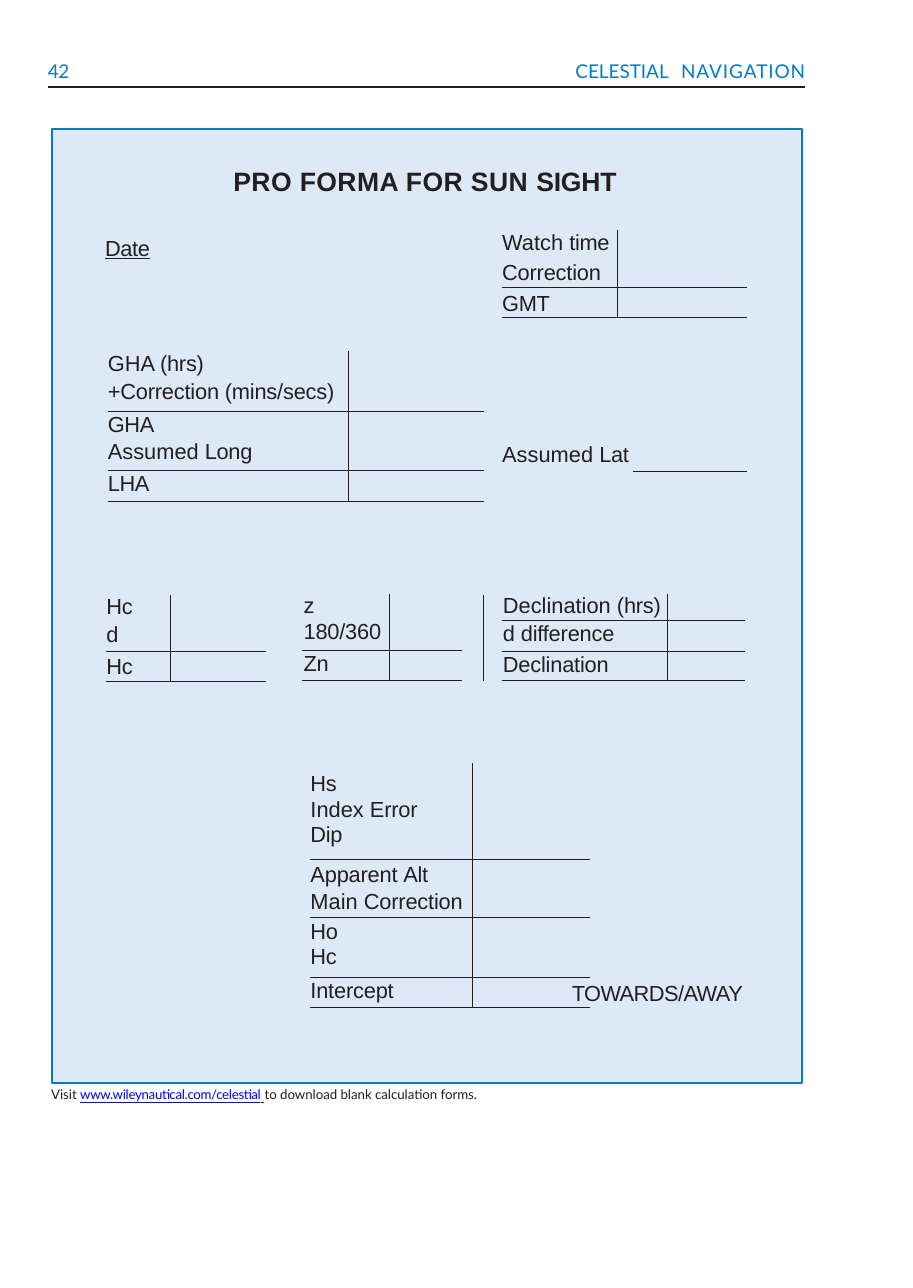
from dataclasses import dataclass
from typing import Optional, Union

from lxml.etree import SubElement
from pptx import Presentation
from pptx.dml.color import RGBColor
from pptx.enum.shapes import MSO_CONNECTOR as Connector, MSO_SHAPE as Preset
from pptx.enum.text import MSO_ANCHOR as Anchor, MSO_AUTO_SIZE as AutoSize, PP_ALIGN as Align
from pptx.oxml.ns import qn
from pptx.util import Inches, Length, Pt


@dataclass(frozen=True)
class Theme:
    ink: str = "231F20"
    accent: str = "007DC5"
    panel: str = "DEE9F7"
    link: str = "0000FF"
    body_font: str = "Arial"
    page_font: str = "Lato"
    title_size: float = 14
    form_size: float = 11.5
    header_size: float = 10
    note_size: float = 7
    thin: float = 0.5
    thick: float = 1


THEME = Theme()
CELL = 0.1


@dataclass(frozen=True)
class Style:
    size: float = THEME.form_size
    font: str = THEME.body_font
    color: str = THEME.ink
    bold: bool = False


@dataclass(frozen=True)
class Run:
    text: str
    tracking: float = 0
    color: Optional[str] = None
    underline: bool = False


@dataclass(frozen=True)
class Line:
    runs: tuple[Run, ...]
    before: float = 0
    spacing: Union[float, Length, None] = None
    align: Align = Align.LEFT


@dataclass(frozen=True)
class Label:
    column: float
    row: float
    width: float
    height: float
    lines: tuple[Line, ...]
    style: Style = Style()


@dataclass(frozen=True)
class FormRow:
    height: float
    lines: tuple[Line, ...]
    inset: float = 0


@dataclass(frozen=True)
class Form:
    column: float
    row: float
    widths: tuple[float, float]
    rows: tuple[FormRow, ...]
    indent: float = 0


@dataclass(frozen=True)
class Rule:
    start: tuple[float, float]
    end: tuple[float, float]
    weight: float = THEME.thin


def grid(cells: float) -> Length:
    return Inches(cells * CELL)


def line(text: str, tracking: float = 0, before: float = 0,
         spacing: Union[float, Length, None] = None) -> Line:
    return Line((Run(text, tracking),), before, spacing)


HEADER = Style(THEME.header_size, THEME.page_font, THEME.accent)
NOTE = Style(THEME.note_size, THEME.page_font)
TITLE = Label(17.1, 12, 30, 2.8, (Line((Run("PRO FORMA FOR SUN ", 0.2), Run("SIGHT", -0.1))),),
              Style(THEME.title_size, bold=True))

LABELS = (
    Label(3.5, 4.3, 1.8, 1.9, (line("42", -0.2),), HEADER),
    Label(41, 4.3, 18, 1.9, (Line((Run("CELESTIAL"), Run(" ", 4), Run("NAVIGATION", 0.5)),
                                  align=Align.RIGHT),), HEADER),
    Label(7.7, 17.1, 8, 2.2, (Line((Run("Date", -0.2, underline=True),)),)),
    Label(36.8, 32.2, 9.8, 2.2, (Line((Run("Assumed "), Run("Lat", -0.2))),)),
    Label(7.8, 43.3, 3, 6.6, (line("Hc", -0.2, spacing=1.04), line("d", -0.5, spacing=1.04),
                              line("Hc", -0.2, before=3.2))),
    Label(41.9, 71.7, 13.6, 2.2, (line("TOWARDS/AWAY", -0.3),)),
    Label(3.75, 79.5, 32, 1.4, (Line((
        Run("Visit "),
        Run("www.wileynautical.com/celestial", -0.15, THEME.link, True),
        Run(" ", 0.3, THEME.link, True),
        Run("to download blank calculation forms."))),), NOTE),
)

RULES = (
    Rule((3.5, 6.4), (59, 6.4), THEME.thick),
    Rule((46.4, 34.55), (54.75, 34.55)),
    Rule((7.8, 47.75), (19.5, 47.75)),
    Rule((7.8, 49.95), (19.5, 49.95)),
    Rule((12.5, 43.6), (12.5, 49.95)),
    Rule((35.45, 43.6), (35.45, 49.95)),
)

FORMS = (
    Form(36.8, 16.85, (8.45, 9.5), (
        FormRow(4.2, (Line((Run("Watch "), Run("time", -0.2)), spacing=Pt(13.3)),
                      line("Correction", -0.1, 2.5, Pt(13.3)))),
        FormRow(2.2, (line("GMT", -0.2, spacing=Pt(13.1)),), 0.3))),
    Form(7.9, 25.7, (17.6, 9.95), (
        FormRow(4.45, (Line((Run("GHA "), Run("(hrs)", -0.1))),
                       line("+Correction (mins/secs)", -0.1, 1.6)), 0.1),
        FormRow(4.3, (line("GHA", -0.2, spacing=Pt(13.4)),
                      Line((Run("Assumed "), Run("Long", -0.2)), 1.6))),
        FormRow(2.3, (line("LHA", -0.2, spacing=Pt(13.6)),)))),
    Form(22.75, 55.9, (11.9, 8.6), (
        FormRow(7.1, (line("Hs", -0.2),
                      Line((Run("Index "), Run("Error", -0.1)), spacing=1.04),
                      line("Dip", -0.2, spacing=1.04)), 0.7),
        FormRow(4.25, (Line((Run("Apparent ", -0.1), Run("Alt", -0.2)), spacing=Pt(14.4)),
                       Line((Run("Main "), Run("Correction", -0.1)), spacing=Pt(14.4)))),
        FormRow(4.4, (line("Ho", -0.2, spacing=1.04), line("Hc", -0.2, spacing=1.04)), 0.1),
        FormRow(2.2, (line("Intercept", -0.1),), 0.1))),
    Form(22.15, 43.55, (6.4, 5.3), (
        FormRow(4.15, (line("z", spacing=Pt(12.8)), line("180/360", -0.1, 0.6))),
        FormRow(2.15, (line("Zn", -0.2),), 0.1)), 0.1),
    Form(36.75, 43.55, (12.15, 5.7), (
        FormRow(1.9, (Line((Run("Declination "), Run("(hrs)", -0.1)), spacing=Pt(12.6)),)),
        FormRow(2.25, (Line((Run("d"), Run(" difference", -0.1)), spacing=Pt(13.5)),)),
        FormRow(2.15, (line("Declination", -0.1),), 0.1)), 0.1),
)


def write(frame, lines: tuple[Line, ...], style: Style) -> None:
    for index, item in enumerate(lines):
        paragraph = frame.paragraphs[0] if index == 0 else frame.add_paragraph()
        paragraph.alignment = item.align
        paragraph.space_before = Pt(item.before)
        if item.spacing is not None:
            paragraph.line_spacing = item.spacing
        for part in item.runs:
            run = paragraph.add_run()
            run.text = part.text
            run.font.name = style.font
            run.font.size = Pt(style.size)
            run.font.bold = style.bold
            run.font.underline = part.underline
            run.font.color.rgb = RGBColor.from_string(part.color or style.color)
            if part.tracking:
                run.font._element.set("spc", str(round(part.tracking * 100)))


def fill_label(shape, label: Label) -> None:
    shape.left, shape.top = grid(label.column), grid(label.row)
    shape.width, shape.height = grid(label.width), grid(label.height)
    frame = shape.text_frame
    frame.word_wrap = True
    frame.auto_size = AutoSize.NONE
    frame.vertical_anchor = Anchor.TOP
    frame.margin_left = frame.margin_right = frame.margin_bottom = 0
    frame.margin_top = grid(0.1)
    write(frame, label.lines, label.style)


def draw_panel(slide):
    panel = slide.shapes.add_shape(Preset.RECTANGLE, grid(3.8), grid(9.45), grid(54.95), grid(69.9))
    panel.shadow.inherit = False
    panel.fill.solid()
    panel.fill.fore_color.rgb = RGBColor.from_string(THEME.panel)
    panel.line.color.rgb = RGBColor.from_string(THEME.accent)
    panel.line.width = Pt(THEME.thick)
    return panel


def draw_rule(slide, rule: Rule) -> None:
    connector = slide.shapes.add_connector(
        Connector.STRAIGHT, *(grid(cells) for cells in rule.start + rule.end))
    connector.line.color.rgb = RGBColor.from_string(THEME.ink)
    connector.line.width = Pt(rule.weight)
    SubElement(connector.element.spPr, qn("a:effectLst"))


def set_borders(cell, visible: dict[str, bool]) -> None:
    properties = cell._tc.get_or_add_tcPr()
    for side, shown in visible.items():
        border = SubElement(properties, qn(f"a:ln{side}"), w=str(Pt(THEME.thin)))
        if shown:
            paint = SubElement(border, qn("a:solidFill"))
            SubElement(paint, qn("a:srgbClr"), val=THEME.ink)
        else:
            SubElement(border, qn("a:noFill"))


def draw_form(slide, form: Form) -> None:
    height = sum(row.height for row in form.rows)
    table = slide.shapes.add_table(len(form.rows), 2, grid(form.column), grid(form.row),
                                   grid(sum(form.widths)), grid(height)).table
    table.first_row = table.horz_banding = False
    for column, width in zip(table.columns, form.widths):
        column.width = grid(width)
    for row_index, row in enumerate(form.rows):
        table.rows[row_index].height = grid(row.height)
        for column_index, lines in enumerate((row.lines, ())):
            cell = table.cell(row_index, column_index)
            cell.margin_left = grid(form.indent)
            cell.margin_right = cell.margin_bottom = 0
            cell.margin_top = grid(row.inset)
            set_borders(cell, {"L": column_index == 1, "R": column_index == 0,
                               "T": row_index > 0, "B": True})
            cell.fill.solid()
            cell.fill.fore_color.rgb = RGBColor.from_string(THEME.panel)
            write(cell.text_frame, lines, Style())
            if not lines:
                SubElement(cell.text_frame.paragraphs[0]._p, qn("a:endParaRPr"),
                           sz=str(round(THEME.form_size * 100)))


def main() -> None:
    presentation = Presentation()
    presentation.slide_width, presentation.slide_height = grid(66.9), grid(94.4)
    slide = presentation.slides.add_slide(presentation.slide_layouts[5])
    panel = draw_panel(slide)
    title = slide.shapes.title
    fill_label(title, TITLE)
    panel.element.addnext(title.element)
    for rule in RULES:
        draw_rule(slide, rule)
    for form in FORMS:
        draw_form(slide, form)
    for label in LABELS:
        fill_label(slide.shapes.add_textbox(0, 0, 0, 0), label)
    presentation.save("out.pptx")


if __name__ == "__main__":
    main()
